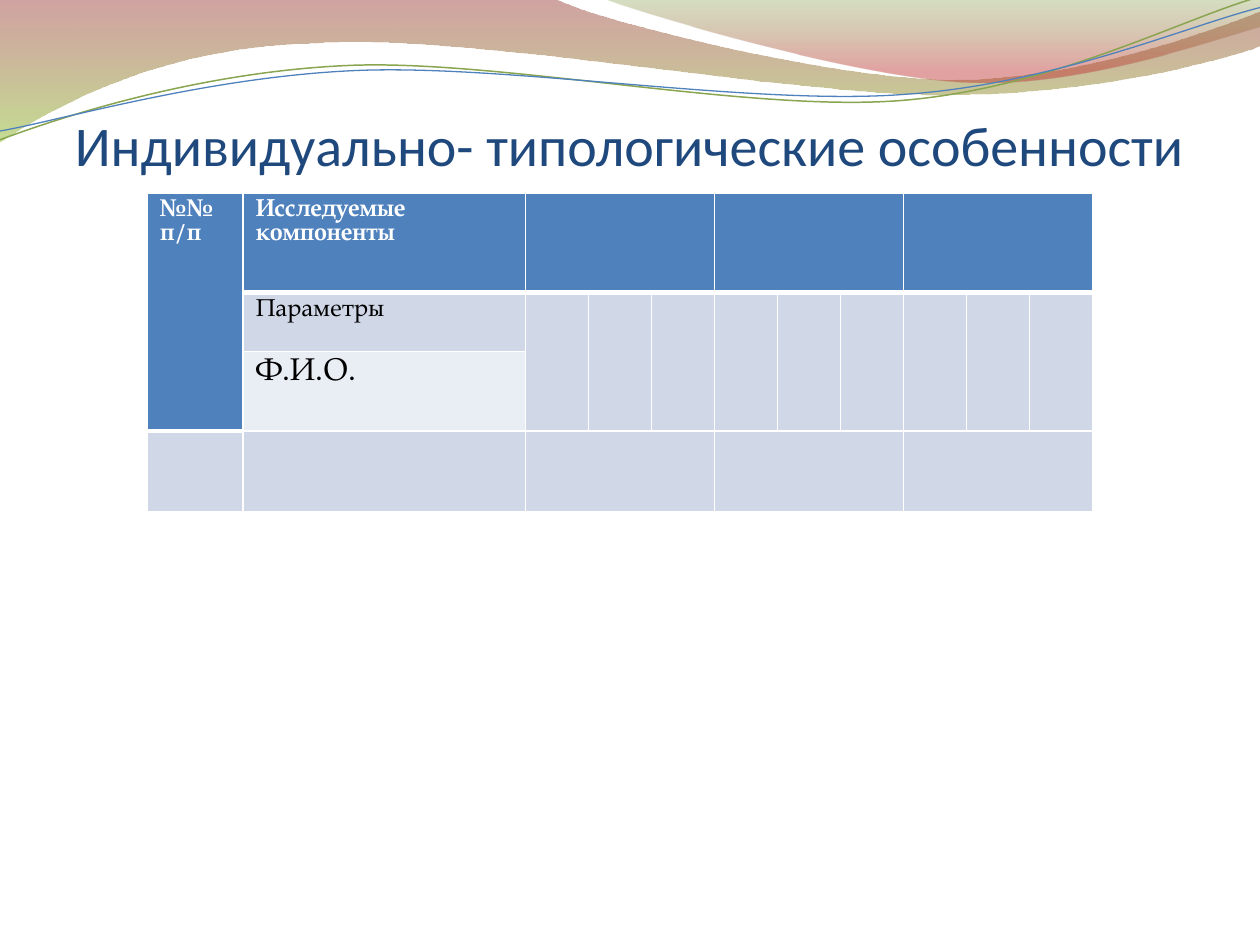
from dataclasses import dataclass
from typing import NamedTuple, Optional

import pptx
import pptx.dml.color
import pptx.enum.text
import pptx.oxml
import pptx.oxml.ns
import pptx.util
from pptx.util import Inches


@dataclass(frozen=True)
class Theme:
    title_font: str = "Calibri"
    table_font: str = "TeX Gyre Pagella"
    title_size: int = 32
    body_size: int = 14
    name_size: int = 18
    title: str = "1F497D"
    header: str = "4F81BD"
    band: str = "D0D8E8"
    light_band: str = "E9EDF4"
    white: str = "FFFFFF"
    black: str = "000000"
    red: str = "973330"
    lime: str = "95C238"
    olive: str = "769537"
    scarlet: str = "BE3330"
    green_line: str = "89A54F"
    blue_line: str = "4F81BD"


THEME = Theme()


class Stop(NamedTuple):
    position: float
    color: str
    opacity: int


class Wave(NamedTuple):
    """Segments hold (x, y) for a straight edge or six numbers for a Bezier curve."""
    start: tuple
    segments: list
    stops: Optional[list] = None
    line: Optional[tuple] = None


class Entry(NamedTuple):
    row: int
    col: int
    lines: list
    size: int
    color: str
    bold: bool = False


WAVES = [
    Wave((0, 0), [
        (4.4, -0.01),
        (4.76, 0.17, 6.64, 0.63, 7.58, 0.63),
        (8.53, 0.63, 9.58, 0.26, 10, 0.09),
        (10.01, 0.36),
        (9.83, 0.44, 8.7, 0.76, 7.46, 0.75),
        (6.22, 0.75, 3.82, 0.28, 2.57, 0.34),
        (1.29, 0.36, 0.46, 0.83, -0.01, 1.13),
        (0, 0),
    ], stops=[Stop(0, THEME.red, 45), Stop(1, THEME.lime, 55)]),
    Wave((4.79, -0.01), [
        (5.09, 0.11, 6.82, 0.62, 7.69, 0.65),
        (8.56, 0.69, 9.61, 0.32, 10, 0.21),
        (10, 0),
        (4.79, -0.01),
    ], stops=[Stop(0, THEME.olive, 30), Stop(0.8, THEME.scarlet, 45)]),
    Wave((0, 1.11), [
        (0.48, 0.93, 1.58, 0.57, 2.77, 0.52),
        (3.95, 0.47, 5.93, 0.89, 7.13, 0.8),
        (8.33, 0.71, 9.38, 0.15, 9.98, -0.02),
    ], line=(THEME.green_line, 0.85)),
    Wave((0, 1.04), [
        (0.47, 0.96, 1.64, 0.61, 2.83, 0.56),
        (4.03, 0.51, 5.97, 0.84, 7.17, 0.75),
        (8.36, 0.67, 9.41, 0.21, 10, 0.06),
    ], line=(THEME.blue_line, 0.75)),
]

ENTRIES = [
    Entry(0, 0, ["№№", "п/п"], THEME.body_size, THEME.white, True),
    Entry(0, 1, ["Исследуемые", "компоненты"], THEME.body_size, THEME.white, True),
    Entry(1, 1, ["Параметры"], THEME.body_size, THEME.black),
    Entry(2, 1, ["Ф.И.О."], THEME.name_size, THEME.black),
]
COLUMN_WIDTHS = [0.76, 2.24] + [0.5] * 9
ROW_HEIGHTS = [0.79, 0.47, 0.63, 0.64]


def rgb(color: str) -> pptx.dml.color.RGBColor:
    return pptx.dml.color.RGBColor.from_string(color)


def bend(ribbon, segments: list) -> None:
    """Join the three edges of each curved segment into one Bezier curve."""
    edges = iter(list(ribbon.element.iter(pptx.oxml.ns.qn("a:lnTo"))))
    for segment in segments:
        first = next(edges)
        if len(segment) == 2:
            continue
        curve = pptx.oxml.parse_xml(f'<a:cubicBezTo {pptx.oxml.ns.nsdecls("a")}/>')
        first.addprevious(curve)
        for edge in (first, next(edges), next(edges)):
            curve.append(edge[0])
            edge.getparent().remove(edge)


def draw_wave(slide, wave: Wave) -> None:
    points = [(Inches(segment[i]), Inches(segment[i + 1]))
              for segment in wave.segments for i in range(0, len(segment), 2)]
    builder = slide.shapes.build_freeform(*map(Inches, wave.start))
    builder.add_line_segments(points, close=wave.stops is not None)
    ribbon = builder.convert_to_shape()
    bend(ribbon, wave.segments)
    ribbon.shadow.inherit = False
    if wave.line:
        color, width = wave.line
        ribbon.fill.background()
        ribbon.line.color.rgb = rgb(color)
        ribbon.line.width = pptx.util.Pt(width)
        return
    ribbon.line.fill.background()
    ribbon.fill.gradient()
    ribbon.fill.gradient_angle = 270
    for target, stop in zip(ribbon.fill.gradient_stops, wave.stops):
        target.position = stop.position
        target.color.rgb = rgb(stop.color)
    # Opacity of each gradient stop
    colors = ribbon.element.spPr.iter(pptx.oxml.ns.qn("a:srgbClr"))
    for color, stop in zip(colors, wave.stops):
        color.append(pptx.oxml.parse_xml(
            f'<a:alpha {pptx.oxml.ns.nsdecls("a")} val="{stop.opacity * 1000}"/>'))


def set_borders(cell, bottom: int) -> None:
    widths = {"lnL": 1, "lnR": 1, "lnT": 1, "lnB": bottom}
    properties = cell._tc.get_or_add_tcPr()
    for index, (side, width) in enumerate(widths.items()):
        properties.insert(index, pptx.oxml.parse_xml(
            f'<a:{side} {pptx.oxml.ns.nsdecls("a")} w="{pptx.util.Pt(width)}">'
            f'<a:solidFill><a:srgbClr val="{THEME.white}"/></a:solidFill></a:{side}>'))


def cell_fill(row: int, col: int) -> str:
    if row == 0 or (col == 0 and row < 3):
        return THEME.header
    return THEME.light_band if (row, col) == (2, 1) else THEME.band


def write_entry(grid, entry: Entry) -> None:
    frame = grid.cell(entry.row, entry.col).text_frame
    frame.text = "\n".join(entry.lines)
    for paragraph in frame.paragraphs:
        paragraph.font.name = THEME.table_font
        paragraph.font.size = pptx.util.Pt(entry.size)
        paragraph.font.bold = entry.bold
        paragraph.font.color.rgb = rgb(entry.color)


def draw_features_table(slide) -> None:
    grid = slide.shapes.add_table(
        len(ROW_HEIGHTS), len(COLUMN_WIDTHS), Inches(1.17), Inches(1.53),
        Inches(sum(COLUMN_WIDTHS)), Inches(sum(ROW_HEIGHTS))).table
    grid.first_row = grid.horz_banding = False
    for column, width in zip(grid.columns, COLUMN_WIDTHS):
        column.width = Inches(width)
    for row, height in zip(grid.rows, ROW_HEIGHTS):
        row.height = Inches(height)
    for row in range(len(ROW_HEIGHTS)):
        for col in range(len(COLUMN_WIDTHS)):
            cell = grid.cell(row, col)
            fill = cell_fill(row, col)
            cell.fill.solid()
            cell.fill.fore_color.rgb = rgb(fill)
            set_borders(cell, bottom=3 if fill == THEME.header else 1)
    # Number column, component groups and parameter columns
    grid.cell(0, 0).merge(grid.cell(2, 0))
    for row in (0, 3):
        for col in range(2, 11, 3):
            grid.cell(row, col).merge(grid.cell(row, col + 2))
    for col in range(2, 11):
        grid.cell(1, col).merge(grid.cell(2, col))
    for entry in ENTRIES:
        write_entry(grid, entry)


def place_title(slide) -> None:
    heading = slide.shapes.title
    heading.left, heading.top = Inches(0.5), Inches(0.16)
    heading.width, heading.height = Inches(9), Inches(1.25)
    frame = heading.text_frame
    frame.text = "Индивидуально- типологические особенности"
    frame.word_wrap = True
    frame.auto_size = pptx.enum.text.MSO_AUTO_SIZE.NONE
    frame.vertical_anchor = pptx.enum.text.MSO_ANCHOR.BOTTOM
    frame.margin_left = frame.margin_right = frame.margin_bottom = 0
    frame.margin_top = Inches(0.05)
    paragraph = frame.paragraphs[0]
    paragraph.alignment = pptx.enum.text.PP_ALIGN.CENTER
    paragraph.font.name = THEME.title_font
    paragraph.font.size = pptx.util.Pt(THEME.title_size)
    paragraph.font.color.rgb = rgb(THEME.title)
    # Bring the title in front of the waves
    heading.element.getparent().append(heading.element)


def main() -> None:
    deck = pptx.Presentation()
    deck.slide_width, deck.slide_height = Inches(10), Inches(7.5)
    slide = deck.slides.add_slide(deck.slide_layouts[5])
    for wave in WAVES:
        draw_wave(slide, wave)
    place_title(slide)
    draw_features_table(slide)
    deck.save("out.pptx")


if __name__ == "__main__":
    main()
